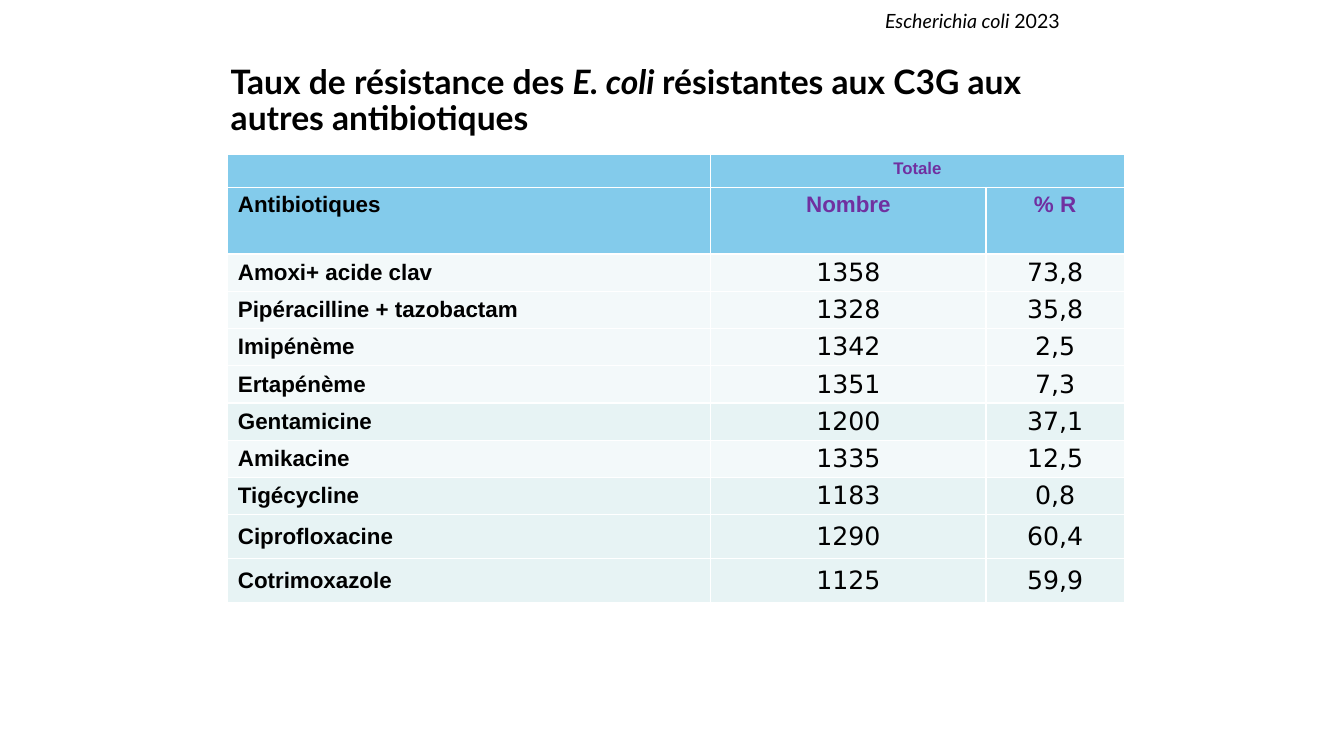
from lxml.etree import SubElement
from pptx import Presentation
from pptx.dml.color import RGBColor
from pptx.enum.text import MSO_ANCHOR as Anchor, PP_ALIGN as Align
from pptx.oxml.ns import qn
from pptx.util import Inches, Pt

SLIDE_SIZE = (13.33, 7.5)
BLACK, PURPLE, WHITE = "000000", "7030A0", "FFFFFF"
HEADER_BLUE, PALE, TINTED = "83CBEB", "F3F9FA", "E7F3F4"

# Each run is (text, italic)
TITLE = [
    ("Taux de résistance des ", False),
    ("E. coli ", True),
    ("résistantes aux C3G aux autres antibiotiques", False),
]
SOURCE = [("Escherichia coli ", True), ("2023", False)]

GROUP_HEADER = "Totale"
COLUMN_HEADERS = ["Antibiotiques", "Nombre", "% R"]
RESISTANCE = [
    ("Amoxi+ acide clav", "1358", "73,8", PALE),
    ("Pipéracilline + tazobactam", "1328", "35,8", PALE),
    ("Imipénème", "1342", "2,5", PALE),
    ("Ertapénème", "1351", "7,3", PALE),
    ("Gentamicine", "1200", "37,1", TINTED),
    ("Amikacine", "1335", "12,5", PALE),
    ("Tigécycline", "1183", "0,8", TINTED),
    ("Ciprofloxacine", "1290", "60,4", TINTED),
    ("Cotrimoxazole", "1125", "59,9", TINTED),
]

TABLE_LEFT, TABLE_TOP = 2.26, 1.53
COLUMN_WIDTHS = [4.79, 2.73, 1.37]
ROW_HEIGHTS = [0.33, 0.66] + [0.37] * 7 + [0.43, 0.44]
WIDE_MARGINS, NARROW_MARGINS = (0.1, 0.05), (0.03, 0)


def color(value):
    return RGBColor.from_string(value)


def format_run(run, size, font_name, font_color=BLACK, bold=False, italic=False):
    font = run.font
    font.size, font.name = Pt(size), font_name
    font.bold, font.italic = bold, italic
    font.color.rgb = color(font_color)


def add_text(slide, runs, box, size, bold=False, anchor=Anchor.TOP, line_spacing=1.0):
    frame = slide.shapes.add_textbox(*map(Inches, box)).text_frame
    frame.word_wrap = True
    frame.vertical_anchor = anchor
    paragraph = frame.paragraphs[0]
    paragraph.line_spacing = line_spacing
    for text, italic in runs:
        run = paragraph.add_run()
        run.text = text
        format_run(run, size, "Lato", bold=bold, italic=italic)


def style_cell(cell, fill, margins, anchor=Anchor.TOP):
    """Set borders first: the schema wants them before the fill."""
    properties = cell._tc.get_or_add_tcPr()
    for side in ("L", "R", "T", "B"):
        line = SubElement(properties, qn(f"a:ln{side}"), w=str(Pt(1)))
        SubElement(SubElement(line, qn("a:solidFill")), qn("a:srgbClr"), val=WHITE)
    cell.fill.solid()
    cell.fill.fore_color.rgb = color(fill)
    cell.margin_left = cell.margin_right = Inches(margins[0])
    cell.margin_top = cell.margin_bottom = Inches(margins[1])
    cell.vertical_anchor = anchor


def write_cell(cell, text, align, **font):
    paragraph = cell.text_frame.paragraphs[0]
    paragraph.text = text
    paragraph.alignment = align
    format_run(paragraph.runs[0], **font)


def fill_headers(table):
    for column, header in enumerate(COLUMN_HEADERS):
        style_cell(table.cell(0, column), HEADER_BLUE,
                   WIDE_MARGINS if column else NARROW_MARGINS)
        style_cell(table.cell(1, column), HEADER_BLUE, WIDE_MARGINS)
        write_cell(table.cell(1, column), header,
                   Align.CENTER if column else Align.LEFT,
                   size=16, font_name="Arial", bold=True,
                   font_color=PURPLE if column else BLACK)
    group = table.cell(0, 1)
    group.merge(table.cell(0, 2))
    write_cell(group, GROUP_HEADER, Align.CENTER,
               size=12, font_name="Arial", bold=True, font_color=PURPLE)


def fill_results(table):
    for row, (*values, fill) in enumerate(RESISTANCE, start=2):
        for column, value in enumerate(values):
            cell = table.cell(row, column)
            if column == 0:
                style_cell(cell, fill, WIDE_MARGINS, Anchor.MIDDLE)
                write_cell(cell, value, Align.LEFT, size=16, font_name="Arial", bold=True)
            else:
                style_cell(cell, fill, NARROW_MARGINS, Anchor.MIDDLE)
                write_cell(cell, value, Align.CENTER, size=18, font_name="DejaVu Sans")


def add_resistance_table(slide):
    box = (TABLE_LEFT, TABLE_TOP, sum(COLUMN_WIDTHS), sum(ROW_HEIGHTS))
    table = slide.shapes.add_table(
        len(ROW_HEIGHTS), len(COLUMN_WIDTHS), *map(Inches, box)).table
    table.horz_banding = False
    for column, width in zip(table.columns, COLUMN_WIDTHS):
        column.width = Inches(width)
    for row, height in zip(table.rows, ROW_HEIGHTS):
        row.height = Inches(height)
    fill_headers(table)
    fill_results(table)


def main():
    presentation = Presentation()
    presentation.slide_width, presentation.slide_height = map(Inches, SLIDE_SIZE)
    slide = presentation.slides.add_slide(presentation.slide_layouts[6])
    add_text(slide, TITLE, (2.19, 0.38, 9, 1.25), 24, bold=True,
             anchor=Anchor.MIDDLE, line_spacing=0.9)
    add_resistance_table(slide)
    add_text(slide, SOURCE, (8.68, 0.04, 2.52, 0.34), 14)
    presentation.save("out.pptx")


if __name__ == "__main__":
    main()
